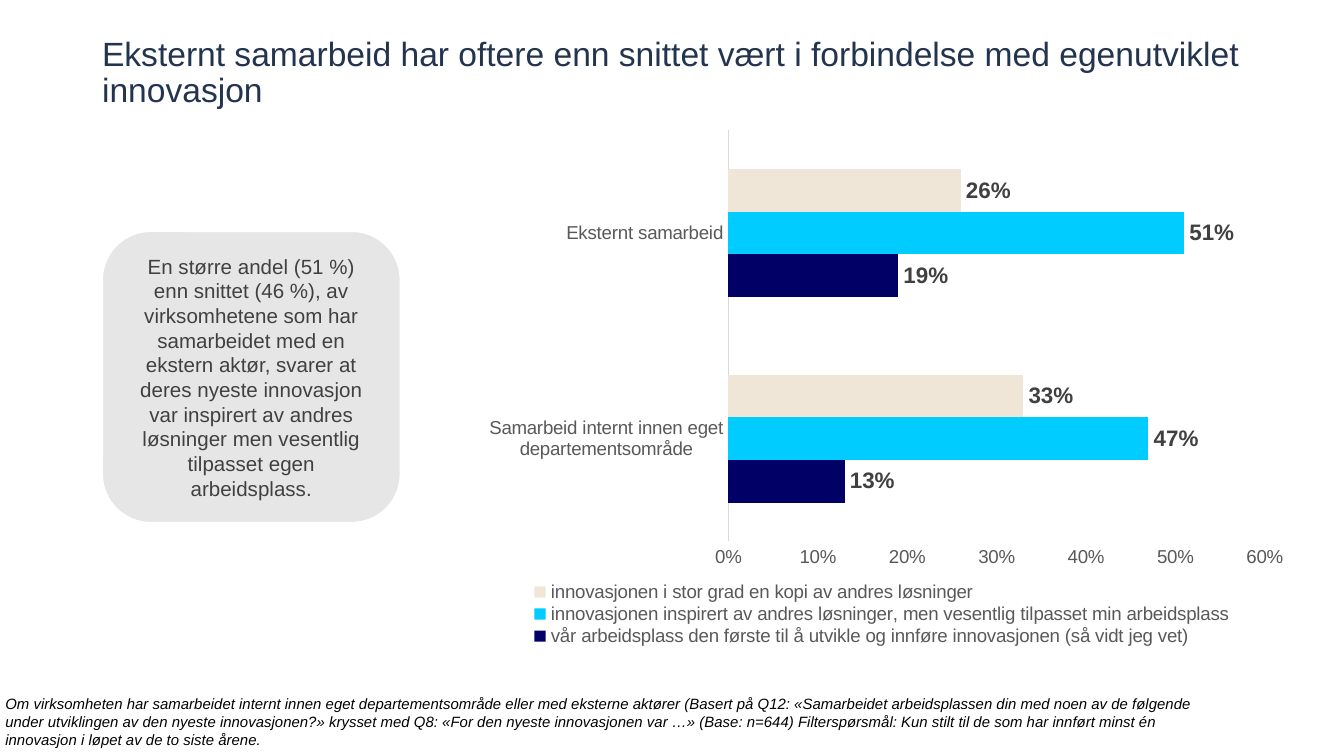
from lxml.etree import SubElement
from pptx import Presentation
from pptx.chart.data import CategoryChartData
from pptx.dml.color import RGBColor
from pptx.enum.chart import XL_CHART_TYPE, XL_LABEL_POSITION, XL_LEGEND_POSITION, XL_TICK_MARK
from pptx.enum.shapes import MSO_SHAPE
from pptx.enum.text import MSO_ANCHOR, PP_ALIGN
from pptx.oxml.ns import qn
from pptx.util import Inches, Pt

FONT = "Arial"
PERCENT = "0%"
CHART_WIDTH, CHART_HEIGHT = 6.3, 4.21
BLACK = RGBColor(0x00, 0x00, 0x00)
WHITE = RGBColor(0xFF, 0xFF, 0xFF)
TITLE_BLUE = RGBColor(0x23, 0x34, 0x4F)
DARK_GREY = RGBColor(0x40, 0x40, 0x40)
AXIS_GREY = RGBColor(0x59, 0x59, 0x59)
LINE_GREY = RGBColor(0xD9, 0xD9, 0xD9)
CALLOUT_GREY = RGBColor(0xE7, 0xE6, 0xE6)
NAVY = RGBColor(0x00, 0x00, 0x66)
CYAN = RGBColor(0x00, 0xCC, 0xFF)
CREAM = RGBColor(0xF0, 0xE6, 0xD8)

TITLE = "Eksternt samarbeid har oftere enn snittet vært i forbindelse med egenutviklet innovasjon"
CALLOUT = (
    "En større andel (51 %) enn snittet (46 %), av virksomhetene som har samarbeidet "
    "med en ekstern aktør, svarer at deres nyeste innovasjon var inspirert av andres "
    "løsninger men vesentlig tilpasset egen arbeidsplass."
)
FOOTNOTE = (
    "Om virksomheten har samarbeidet internt innen eget departementsområde eller med "
    "eksterne aktører (Basert på Q12: «Samarbeidet arbeidsplassen din med noen av de "
    "følgende under utviklingen av den nyeste innovasjonen?» krysset med Q8: «For den "
    "nyeste innovasjonen var …» (Base: n=644) Filterspørsmål: Kun stilt til de som har "
    "innført minst én innovasjon i løpet av de to siste årene."
)
CATEGORIES = ["Samarbeid internt innen eget departementsområde", "Eksternt samarbeid"]
SERIES = [
    ("vår arbeidsplass den første til å utvikle og innføre innovasjonen (så vidt jeg vet)",
     (0.13, 0.19), NAVY),
    ("innovasjonen inspirert av andres løsninger, men vesentlig tilpasset min arbeidsplass",
     (0.47, 0.51), CYAN),
    ("innovasjonen i stor grad en kopi av andres løsninger", (0.33, 0.26), CREAM),
]


def style_font(font, size, color, bold=False, italic=False):
    font.name = FONT
    font.size = Pt(size)
    font.color.rgb = color
    font.bold = bold
    font.italic = italic


def write_text(frame, text, *, size, color, italic=False, align=PP_ALIGN.LEFT,
               anchor=MSO_ANCHOR.TOP, line_spacing=1.0):
    frame.word_wrap = True
    frame.vertical_anchor = anchor
    paragraph = frame.paragraphs[0]
    paragraph.alignment = align
    paragraph.line_spacing = line_spacing
    run = paragraph.add_run()
    run.text = text
    style_font(run.font, size, color, italic=italic)


def add_text_box(slide, left, top, width, height, text, **text_format):
    box = slide.shapes.add_textbox(Inches(left), Inches(top), Inches(width), Inches(height))
    frame = box.text_frame
    frame.margin_left = frame.margin_right = frame.margin_top = frame.margin_bottom = 0
    write_text(frame, text, **text_format)


def add_callout(slide):
    callout = slide.shapes.add_shape(
        MSO_SHAPE.ROUNDED_RECTANGLE, Inches(0.76), Inches(1.72), Inches(2.22), Inches(2.17))
    callout.shadow.inherit = False
    callout.fill.solid()
    callout.fill.fore_color.rgb = CALLOUT_GREY
    callout.line.color.rgb = WHITE
    callout.line.width = Pt(1)
    write_text(callout.text_frame, CALLOUT, size=11, color=DARK_GREY,
               align=PP_ALIGN.CENTER, anchor=MSO_ANCHOR.MIDDLE)


def place_in_chart(part, position, left, top, width, height, inner=False):
    """Fix a chart part, in inches from the chart's corner."""
    layout = part.find(qn("c:layout"))
    if layout is None:
        layout = SubElement(part, qn("c:layout"))
        part.insert(position, layout)
    manual = SubElement(layout, qn("c:manualLayout"))
    settings = [("layoutTarget", "inner")] if inner else []
    settings += [("xMode", "edge"), ("yMode", "edge"),
                 ("x", left / CHART_WIDTH), ("y", top / CHART_HEIGHT),
                 ("w", width / CHART_WIDTH), ("h", height / CHART_HEIGHT)]
    for tag, value in settings:
        SubElement(manual, qn(f"c:{tag}")).set("val", str(value))


def style_axes(chart):
    for axis in (chart.category_axis, chart.value_axis):
        axis.major_tick_mark = axis.minor_tick_mark = XL_TICK_MARK.NONE
        axis.has_major_gridlines = False
        style_font(axis.tick_labels.font, 10, AXIS_GREY)
    chart.category_axis.format.line.color.rgb = LINE_GREY
    chart.category_axis.format.line.width = Pt(0.75)
    values = chart.value_axis
    values.format.line.fill.background()
    values.minimum_scale, values.maximum_scale, values.major_unit = 0, 0.6, 0.1
    values.tick_labels.number_format = PERCENT
    values.tick_labels.number_format_is_linked = False


def add_legend(chart):
    chart.has_legend = True
    legend = chart.legend
    legend.position = XL_LEGEND_POSITION.BOTTOM
    legend.include_in_layout = False
    style_font(legend.font, 10, AXIS_GREY)
    place_in_chart(legend._element, 1, 0.48, 3.5, 5.3, 0.5)


def style_series(series, color):
    series.format.fill.solid()
    series.format.fill.fore_color.rgb = color
    series.invert_if_negative = False
    labels = series.data_labels
    labels.show_value = True
    labels.position = XL_LABEL_POSITION.OUTSIDE_END
    labels.number_format = PERCENT
    labels.number_format_is_linked = False
    style_font(labels.font, 12, DARK_GREY, bold=True)


def add_innovation_chart(slide):
    data = CategoryChartData(number_format=PERCENT)
    data.categories = CATEGORIES
    for name, shares, _ in SERIES:
        data.add_series(name, shares)
    chart = slide.shapes.add_chart(
        XL_CHART_TYPE.BAR_CLUSTERED, Inches(3.43), Inches(0.82),
        Inches(CHART_WIDTH), Inches(CHART_HEIGHT), data).chart
    style_font(chart.font, 10, BLACK)
    chart.has_title = False
    add_legend(chart)
    style_axes(chart)
    plot = chart.plots[0]
    plot.gap_width = 182
    plot.vary_by_categories = False
    for series, (_, _, color) in zip(plot.series, SERIES):
        style_series(series, color)
    place_in_chart(plot._element.getparent(), 0, 1.99, 0.15, 3.99, 3.06, inner=True)


def main():
    presentation = Presentation()
    presentation.slide_width = Inches(10)
    presentation.slide_height = presentation.slide_width * 9 // 16
    slide = presentation.slides.add_slide(presentation.slide_layouts[6])
    add_text_box(slide, 0.76, 0.49, 8.6, 0.33, TITLE, size=18, color=TITLE_BLUE,
                 anchor=MSO_ANCHOR.BOTTOM, line_spacing=0.9)
    add_text_box(slide, 0.04, 5.17, 9, 0.4, FOOTNOTE, size=8, color=BLACK, italic=True)
    add_innovation_chart(slide)
    add_callout(slide)
    presentation.save("out.pptx")


if __name__ == "__main__":
    main()
